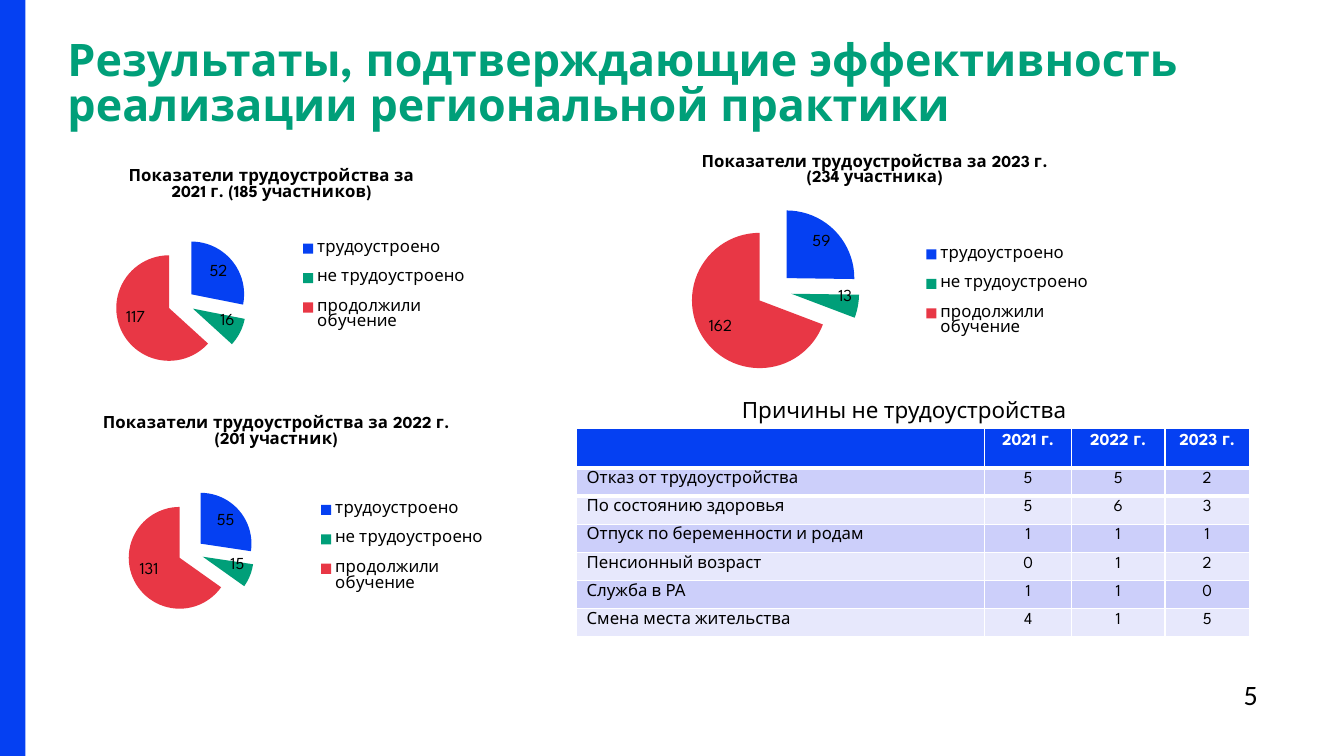
"""Build the slide on employment results for 2021-2023."""
from dataclasses import dataclass
from typing import Optional

from lxml.etree import SubElement
from pptx import Presentation
from pptx.chart.data import CategoryChartData
from pptx.dml.color import RGBColor
from pptx.enum.chart import XL_CHART_TYPE, XL_LABEL_POSITION, XL_LEGEND_POSITION
from pptx.enum.shapes import MSO_SHAPE
from pptx.enum.text import PP_ALIGN
from pptx.oxml.ns import qn
from pptx.util import Cm, Pt

COLORS = {
    "blue": "0540F2", "green": "009F79", "red": "E83745", "black": "000000",
    "white": "FFFFFF", "band_dark": "CCCFFA", "band_light": "E7E8FC",
}
FONT = "League Spartan"
STATUSES = ("трудоустроено", "не трудоустроено", "продолжили обучение")
STATUS_COLORS = ("blue", "green", "red")
YEARS = ("2021 г.", "2022 г.", "2023 г.")
REASONS = (
    ("Отказ от трудоустройства", 5, 5, 2),
    ("По состоянию здоровья", 5, 6, 3),
    ("Отпуск по беременности и родам", 1, 1, 1),
    ("Пенсионный возраст", 0, 1, 2),
    ("Служба в РА", 1, 1, 0),
    ("Смена места жительства", 4, 1, 5),
)
COLUMN_WIDTHS = (10.29, 2.18, 2.36, 2.13)
HEADER_HEIGHT, ROW_HEIGHT = 0.99, 0.65
Area = tuple[float, float, float, float]


@dataclass
class YearPie:
    """One year's figures, area in centimetres, plot and legend as fractions."""
    title: str
    values: tuple[int, int, int]
    area: Area
    plot: Area
    legend: Area
    explosion: int = 25


PIES = (
    YearPie("Показатели трудоустройства за 2022 г. (201 участник)",
            (55, 15, 131), (1.3, 10.13, 11.33, 6.05),
            plot=(0.07, 0.36, 0.48, 0.53), legend=(0.58, 0.36, 0.4, 0.49)),
    YearPie("Показатели трудоустройства за 2023 г. (234 участника)",
            (59, 13, 162), (16.28, 3.53, 11.53, 6.32),
            plot=(0.09, 0.26, 0.38, 0.68), legend=(0.59, 0.37, 0.4, 0.47), explosion=26),
    YearPie("Показатели трудоустройства за 2021 г. (185 участников)",
            (52, 16, 117), (1.78, 3.91, 10.13, 6.05),
            plot=(0.04, 0.34, 0.47, 0.55), legend=(0.56, 0.3, 0.44, 0.49)),
)


def color(name: str) -> RGBColor:
    """Return a named colour."""
    return RGBColor.from_string(COLORS[name])


def style_font(font, size: float = 12, shade: str = "black", bold: bool = False,
               family: str = FONT) -> None:
    """Set every font property used on the slide."""
    font.size, font.bold, font.name = Pt(size), bold, family
    font.color.rgb = color(shade)


def write(frame, text: str, align=PP_ALIGN.LEFT, line_height: Optional[float] = None,
          **font_format) -> None:
    """Write one formatted paragraph into a text frame."""
    para = frame.paragraphs[0]
    para.alignment = align
    if line_height:
        para.line_spacing = Pt(line_height)
    if text:
        span = para.add_run()
        span.text = text
        style_font(span.font, **font_format)
    else:
        style_font(para.font, **font_format)


def add_text(page, text: str, area: Area, margins: Area = (0.25, 0.13, 0.25, 0.13),
             **text_format) -> None:
    """Add a wrapped text box."""
    frame = page.shapes.add_textbox(*map(Cm, area)).text_frame
    frame.word_wrap = True
    (frame.margin_left, frame.margin_top,
     frame.margin_right, frame.margin_bottom) = map(Cm, margins)
    write(frame, text, **text_format)


def place_part(part, position: int, area: Area, inner: bool = False) -> None:
    """Fix a chart part to an area given as fractions of the chart."""
    for old_layout in part.findall(qn("c:layout")):
        part.remove(old_layout)
    layout = SubElement(part, qn("c:layout"))
    part.insert(position, layout)
    manual = SubElement(layout, qn("c:manualLayout"))
    settings = [("layoutTarget", "inner")] if inner else []
    settings += [("xMode", "edge"), ("yMode", "edge"), *zip("xywh", area)]
    for tag, value in settings:
        SubElement(manual, qn(f"c:{tag}")).set("val", str(value))


def add_pie(page, pie: YearPie) -> None:
    """Add an exploded pie chart with title, legend and value labels."""
    data = CategoryChartData()
    data.categories = STATUSES
    data.add_series("Series 1", pie.values)
    chart = page.shapes.add_chart(XL_CHART_TYPE.PIE, *map(Cm, pie.area), data).chart
    style_font(chart.font, size=18, family="Calibri")
    chart.has_title = True
    write(chart.chart_title.text_frame, pie.title, align=PP_ALIGN.CENTER, bold=True)
    chart.chart_title.include_in_layout = False
    chart.has_legend = True
    chart.legend.position = XL_LEGEND_POSITION.RIGHT
    chart.legend.include_in_layout = False
    style_font(chart.legend.font)

    series = chart.plots[0].series[0]
    for index, shade in enumerate(STATUS_COLORS):
        fill = series.points[index].format.fill
        fill.solid()
        fill.fore_color.rgb = color(shade)
    explosion = SubElement(series._element, qn("c:explosion"))
    explosion.set("val", str(pie.explosion))
    series._element.find(qn("c:dPt")).addprevious(explosion)

    labels = series.data_labels
    labels.show_value = True
    labels.position = XL_LABEL_POSITION.INSIDE_END
    style_font(labels.font)
    place_part(chart._chartSpace.chart.plotArea, 0, pie.plot, inner=True)
    place_part(chart._chartSpace.chart.find(qn("c:legend")), 1, pie.legend)


def add_border(cell, side: str) -> None:
    """Draw a thick white line along one side of a cell."""
    properties = cell._tc.get_or_add_tcPr()
    line = SubElement(properties, qn(f"a:{side}"))
    properties.insert(0, line)
    line.set("w", str(Pt(3)))
    fill = SubElement(line, qn("a:solidFill"))
    SubElement(fill, qn("a:srgbClr")).set("val", COLORS["white"])


def add_reasons(page) -> None:
    """Add the table of reasons for not being employed."""
    rows = (("", *YEARS), *REASONS)
    height = HEADER_HEIGHT + ROW_HEIGHT * len(REASONS)
    table = page.shapes.add_table(
        len(rows), len(COLUMN_WIDTHS), Cm(14.53), Cm(10.8),
        Cm(sum(COLUMN_WIDTHS)), Cm(height)).table
    for column, width in zip(table.columns, COLUMN_WIDTHS):
        column.width = Cm(width)
    for row_index, values in enumerate(rows):
        header = row_index == 0
        band = "band_dark" if row_index % 2 else "band_light"
        table.rows[row_index].height = Cm(HEADER_HEIGHT if header else ROW_HEIGHT)
        for column_index, value in enumerate(values):
            cell = table.cell(row_index, column_index)
            cell.margin_top = cell.margin_bottom = Cm(0.13 if header else 0.1)
            cell.fill.solid()
            cell.fill.fore_color.rgb = color("blue" if header else band)
            if row_index < 2:
                add_border(cell, "lnB" if header else "lnT")
            write(cell.text_frame, str(value),
                  align=PP_ALIGN.CENTER if column_index else PP_ALIGN.LEFT,
                  shade="white" if header else "black", bold=header)


def main() -> None:
    """Build and save the slide."""
    deck = Presentation()
    deck.slide_width, deck.slide_height = Cm(33.87), Cm(19.05)
    page = deck.slides.add_slide(deck.slide_layouts[6])

    add_text(page, "5", (31.09, 16.94, 1.35, 1.12), size=20, family="Calibri")
    add_text(page, "Результаты, подтверждающие эффективность реализации региональной практики",
             (1.7, 1.02, 30.3, 1.24), margins=(0, 0, 0, 0), line_height=32,
             size=32, shade="green", bold=True)
    stripe = page.shapes.add_shape(MSO_SHAPE.RECTANGLE, 0, 0, Cm(0.64), deck.slide_height)
    stripe.shadow.inherit = False
    stripe.fill.solid()
    stripe.fill.fore_color.rgb = color("blue")
    stripe.line.fill.background()

    for pie in PIES:
        add_pie(page, pie)
    add_reasons(page)
    add_text(page, "Причины не трудоустройства", (14.53, 9.86, 13.28, 0.94),
             margins=(4.17, 0.13, 0.25, 0.13), size=16)
    deck.save("out.pptx")


if __name__ == "__main__":
    main()
